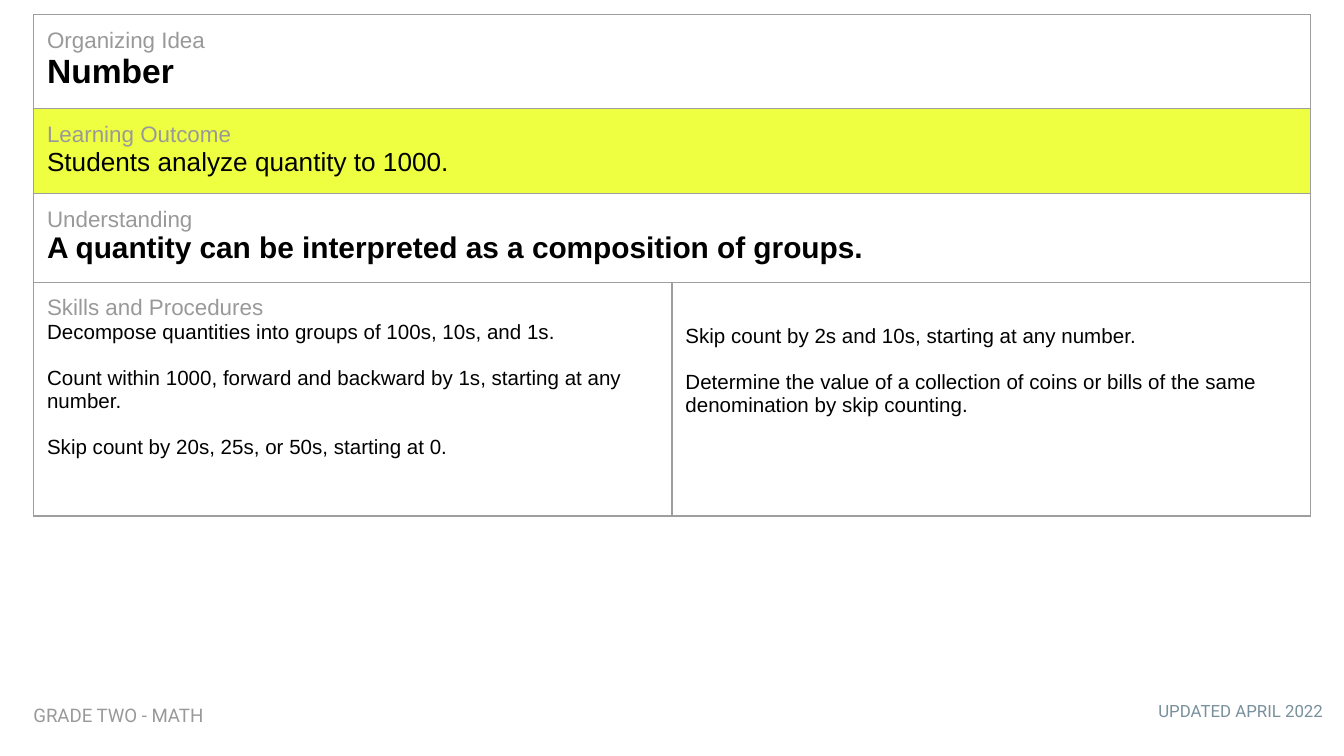
"""Build a grade two math curriculum slide: an outcome table and two footers."""
from dataclasses import dataclass

from lxml import etree
from pptx import Presentation
from pptx import util as u
from pptx.dml.color import RGBColor
from pptx.enum import text
from pptx.oxml import ns

BREAK = None
BANNERS = [
    ("Organizing Idea", "Number", "idea", BREAK, 0.70),
    ("Learning Outcome", "Students analyze quantity to 1000.", "outcome", BREAK, 0.63),
    ("Understanding", "A quantity can be interpreted as a composition of groups.",
     "understanding", 0, 0.66),
]
SKILLS_LABEL = "Skills and Procedures"
SKILLS = [
    [
        "Decompose quantities into groups of 100s, 10s, and 1s.",
        "Count within 1000, forward and backward by 1s, starting at any number.",
        "Skip count by 20s, 25s, or 50s, starting at 0.",
    ],
    [
        "Skip count by 2s and 10s, starting at any number.",
        "Determine the value of a collection of coins or bills of the same "
        "denomination by skip counting.",
    ],
]
SKILLS_HEIGHT = 1.74
FOOTERS = [
    ("UPDATED APRIL 2022", "date", text.PP_ALIGN.RIGHT, (7.24, 5.14, 2.7, 0.35)),
    ("GRADE TWO - MATH", "grade", text.PP_ALIGN.LEFT, (0.15, 5.15, 3.01, 0.37)),
]


@dataclass(frozen=True)
class Style:
    size: float
    color: str = "000000"
    bold: bool = False
    font: str = "Arial"


THEME = {
    "label": Style(12, "999999"),
    "idea": Style(18, bold=True),
    "outcome": Style(14),
    "understanding": Style(16, bold=True),
    "skill": Style(11),
    "date": Style(9, "78909C", font="Roboto"),
    "grade": Style(10, "999999", font="Roboto"),
    "highlight": "EEFF41",
    "border": "9E9E9E",
    "border_width": 0.75,
    "skill_gap": 12.4,
}


def set_margins(target, top=0.1):
    target.margin_left = target.margin_right = target.margin_bottom = u.Inches(0.1)
    target.margin_top = u.Inches(top)


def apply_style(font, style):
    font.name = style.font
    font.size = u.Pt(style.size)
    font.bold = style.bold
    font.color.rgb = RGBColor.from_string(style.color)


def write(frame, lines):
    frame.word_wrap = True
    for index, (words, role, gap) in enumerate(lines):
        if gap is BREAK:
            para = frame.paragraphs[-1]
            para.add_line_break()
            span = para.add_run()
            span.text = words
            apply_style(span.font, THEME[role])
            continue
        para = frame.paragraphs[0] if index == 0 else frame.add_paragraph()
        para.text = words
        para.space_before = u.Pt(gap)
        apply_style(para.font, THEME[role])


def format_cell(cell, fill=None):
    properties = cell._tc.get_or_add_tcPr()
    for side in ("lnL", "lnR", "lnT", "lnB"):
        line = etree.SubElement(properties, ns.qn(f"a:{side}"),
                                w=str(u.Pt(THEME["border_width"])))
        solid = etree.SubElement(line, ns.qn("a:solidFill"))
        etree.SubElement(solid, ns.qn("a:srgbClr"), val=THEME["border"])
    if fill:
        cell.fill.solid()
        cell.fill.fore_color.rgb = RGBColor.from_string(fill)
    else:
        cell.fill.background()
    set_margins(cell)


def add_outcome_table(slide):
    heights = [banner[-1] for banner in BANNERS] + [SKILLS_HEIGHT]
    table = slide.shapes.add_table(
        len(heights), 2, u.Inches(0.25), u.Inches(0.11),
        u.Inches(9.5), u.Inches(sum(heights))).table
    table.first_row = table.horz_banding = False
    for row, height in zip(table.rows, heights):
        row.height = u.Inches(height)

    for index, (label, words, role, gap, _) in enumerate(BANNERS):
        left, right = table.rows[index].cells
        fill = THEME["highlight"] if role == "outcome" else None
        for cell in (left, right):
            format_cell(cell, fill)
        left.merge(right)
        write(left.text_frame, [(label, "label", 0), (words, role, gap)])

    for column, skills in enumerate(SKILLS):
        cell = table.cell(len(BANNERS), column)
        format_cell(cell)
        lines = [(skill, "skill", THEME["skill_gap"] if index else 0)
                 for index, skill in enumerate(skills)]
        if column == 0:
            lines.insert(0, (SKILLS_LABEL, "label", 0))
        else:
            set_margins(cell, top=0.32)
        write(cell.text_frame, lines)


def add_footer(slide, words, role, align, place):
    box = slide.shapes.add_textbox(*map(u.Inches, place))
    set_margins(box.text_frame)
    write(box.text_frame, [(words, role, 0)])
    box.text_frame.paragraphs[0].alignment = align


def main():
    deck = Presentation()
    deck.slide_width, deck.slide_height = u.Inches(10), u.Inches(10 * 9 / 16)
    slide = deck.slides.add_slide(deck.slide_layouts.get_by_name("Blank"))
    add_outcome_table(slide)
    for footer in FOOTERS:
        add_footer(slide, *footer)
    deck.save("out.pptx")


if __name__ == "__main__":
    main()
